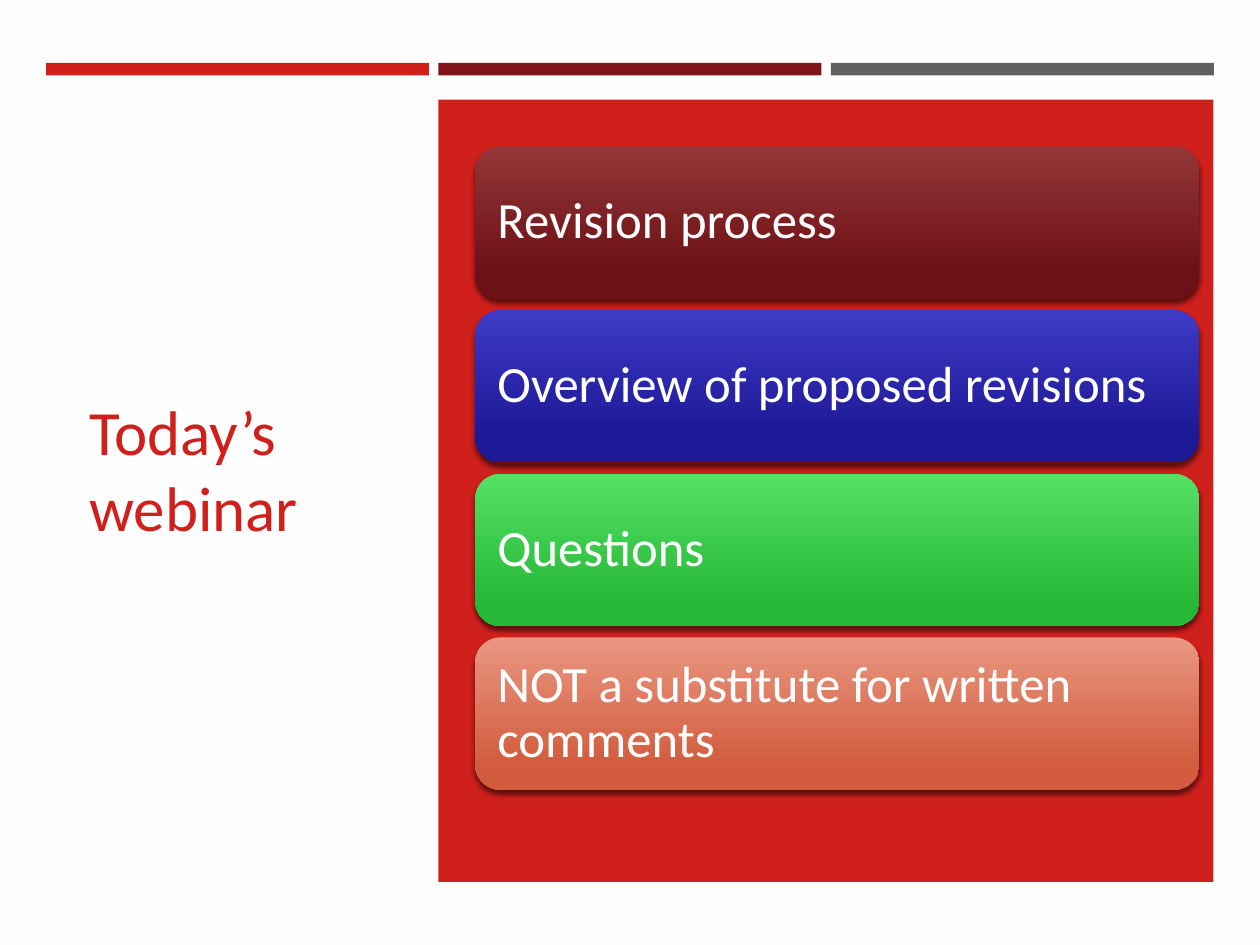
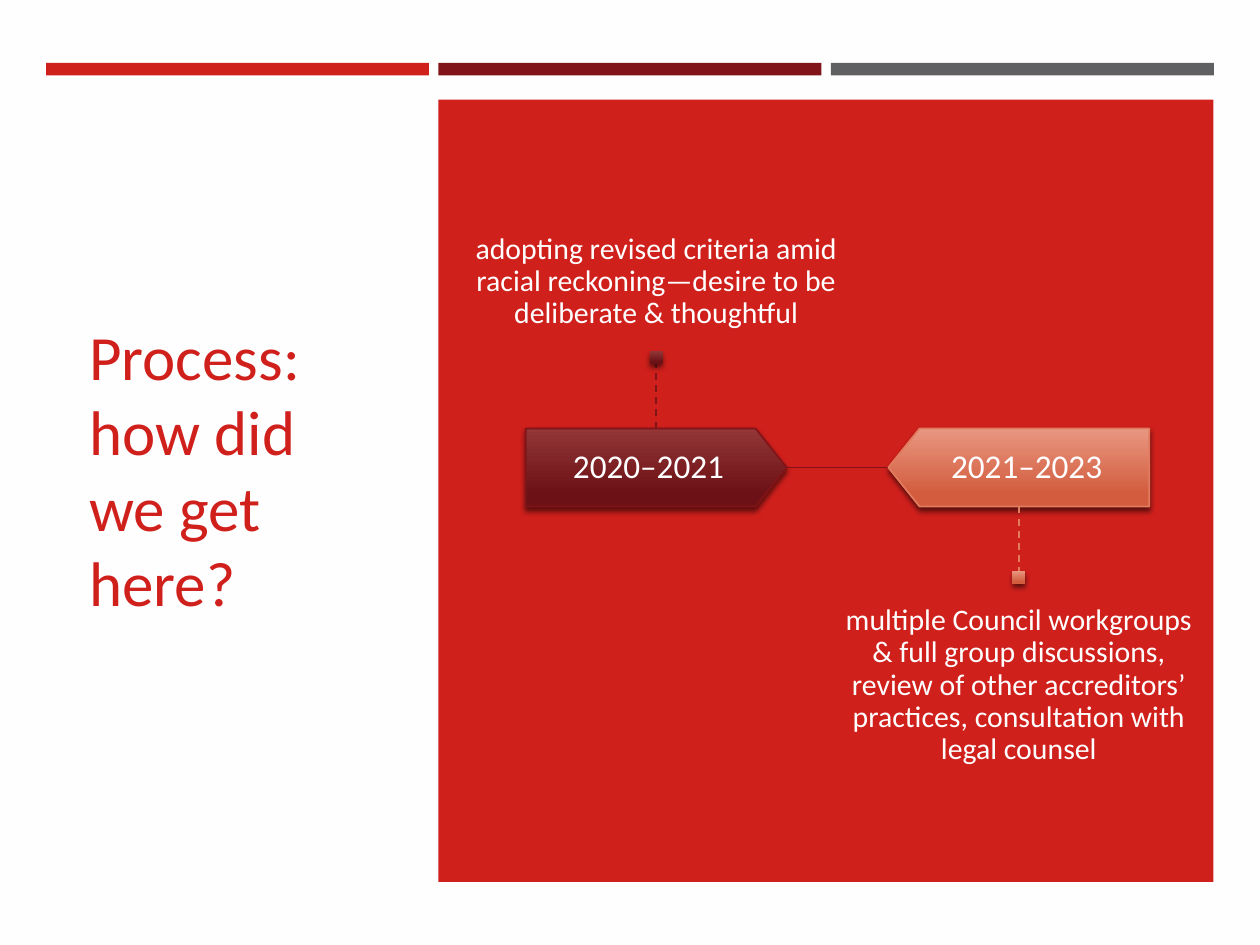
import dataclasses

import pptx
import pptx.dml.color
import pptx.enum.dml
import pptx.enum.shapes
import pptx.enum.text
import pptx.oxml
import pptx.oxml.ns
import pptx.shapes.autoshape
import pptx.slide
import pptx.util

Cm = pptx.util.Cm
Kind = pptx.enum.shapes.MSO_SHAPE
Anchor = pptx.enum.text.MSO_ANCHOR
Align = pptx.enum.text.PP_ALIGN
Slide = pptx.slide.Slide
Shape = pptx.shapes.autoshape.Shape


@dataclasses.dataclass(frozen=True)
class Tone:
    """A vertical shade and the line colour that goes with it."""
    top: str
    base: str
    line: str = ""


@dataclasses.dataclass(frozen=True)
class Theme:
    font: str = "Calibri"
    paper: str = "FFFEFF"
    white: str = "FFFFFF"
    red: str = "D0201C"
    wine: str = "811419"
    grey: str = "5F6062"
    dark: Tone = Tone("923638", "6C1115", "811419")
    blue: Tone = Tone("3D3AC5", "1D1896")
    green: Tone = Tone("55E164", "26B938")
    coral: Tone = Tone("E99782", "D25C3D", "E37B5F")
    title: int = 36
    card: int = 29
    date: int = 19
    note: int = 17


@dataclasses.dataclass(frozen=True)
class Box:
    """Left, top, width and height in centimetres."""
    left: float
    top: float
    width: float
    height: float

    def place(self) -> tuple[pptx.util.Length, ...]:
        return Cm(self.left), Cm(self.top), Cm(self.width), Cm(self.height)


@dataclasses.dataclass(frozen=True)
class Card:
    text: str
    tone: Tone


@dataclasses.dataclass(frozen=True)
class Event:
    date: str
    note: str
    tone: Tone
    mid: float
    above: bool


THEME = Theme()
PANEL = Box(8.84, 2.01, 15.62, 15.77)
TITLE = Box(1.55, 2.9, 6.35, 13.08)
BAND = Box(0.93, 1.27, 7.72, 0.25)
BAND_STEP = 7.91
CARD = Box(9.58, 2.95, 14.6, 3.07)
CARD_STEP = 3.3
TAG_TOP, TAG_WIDE, TAG_HIGH = 8.64, 5.26, 1.57
STEM, DOT = 1.3, 0.26
NOTE_WIDE, NOTE_HIGH = 7.32, 4.19

CARDS = [
    Card("Revision process", THEME.dark),
    Card("Overview of proposed revisions", THEME.blue),
    Card("Questions", THEME.green),
    Card("NOT a substitute for written comments", THEME.coral),
]
EVENTS = [
    Event("2020–2021",
          "adopting revised criteria amid racial reckoning—desire to be "
          "deliberate & thoughtful", THEME.dark, 13.23, True),
    Event("2021–2023",
          "multiple Council workgroups & full group discussions, review of "
          "other accreditors’ practices, consultation with legal counsel",
          THEME.coral, 20.54, False),
]


def shade(code: str) -> pptx.dml.color.RGBColor:
    return pptx.dml.color.RGBColor.from_string(code)


def add_block(slide: Slide, kind: Kind, box: Box) -> Shape:
    """Add a shape without line or shadow."""
    shape = slide.shapes.add_shape(kind, *box.place())
    shape.shadow.inherit = False
    shape.line.fill.background()
    return shape


def add_flat(slide: Slide, box: Box, code: str) -> None:
    shape = add_block(slide, Kind.RECTANGLE, box)
    shape.fill.solid()
    shape.fill.fore_color.rgb = shade(code)


def add_glossy(slide: Slide, kind: Kind, box: Box, tone: Tone) -> Shape:
    """Add a shape with a vertical gradient and a soft drop shadow."""
    shape = add_block(slide, kind, box)
    shape.fill.gradient()
    shape.fill.gradient_angle = 270
    for stop, code, pos in zip(shape.fill.gradient_stops,
                               (tone.top, tone.base), (0, 0.84)):
        stop.color.rgb = shade(code)
        stop.position = pos
    space = pptx.oxml.ns.nsdecls("a")
    shape.element.spPr.find(pptx.oxml.ns.qn("a:effectLst")).append(
        pptx.oxml.parse_xml(
            f'<a:outerShdw {space} blurRad="38100" dist="25400" dir="5400000" '
            'rotWithShape="0"><a:srgbClr val="000000"><a:alpha val="55000"/>'
            '</a:srgbClr></a:outerShdw>'))
    return shape


def add_line(slide: Slide, start: tuple[float, float],
             end: tuple[float, float], code: str, dashed: bool) -> None:
    line = slide.shapes.add_connector(
        pptx.enum.shapes.MSO_CONNECTOR.STRAIGHT,
        *(Cm(value) for value in start + end))
    line.line.color.rgb = shade(code)
    line.line.width = pptx.util.Pt(1)
    if dashed:
        line.line.dash_style = pptx.enum.dml.MSO_LINE.DASH
    line.element.spPr.append(
        pptx.oxml.parse_xml(f'<a:effectLst {pptx.oxml.ns.nsdecls("a")}/>'))


def write(shape: Shape, text: str, size: int, code: str = THEME.white,
          align: Align = Align.LEFT, anchor: Anchor = Anchor.MIDDLE,
          side: float = 0.25, edge: float = 0.13,
          pitch: float = 0.9) -> None:
    """Fill a shape with one styled paragraph; side and edge are insets."""
    frame = shape.text_frame
    frame.word_wrap = True
    frame.vertical_anchor = anchor
    frame.margin_left = frame.margin_right = Cm(side)
    frame.margin_top = frame.margin_bottom = Cm(edge)
    para = frame.paragraphs[0]
    para.text = text
    para.alignment = align
    para.line_spacing = pitch
    para.font.name = THEME.font
    para.font.size = pptx.util.Pt(size)
    para.font.color.rgb = shade(code)


def add_page(deck: pptx.presentation.Presentation, title: str) -> Slide:
    """Add a slide with the title, the three bands and the red panel."""
    slide = deck.slides.add_slide(deck.slide_layouts[6])
    slide.background.fill.solid()
    slide.background.fill.fore_color.rgb = shade(THEME.paper)
    write(slide.shapes.add_textbox(*TITLE.place()), title, THEME.title,
          THEME.red, pitch=1.0)
    for i, code in enumerate((THEME.red, THEME.wine, THEME.grey)):
        left = BAND.left + i * BAND_STEP
        add_flat(slide, dataclasses.replace(BAND, left=left), code)
    add_flat(slide, PANEL, THEME.red)
    return slide


def add_event(slide: Slide, event: Event) -> None:
    """Add a date tag with its stem, dot and note above or below."""
    box = Box(event.mid - TAG_WIDE / 2, TAG_TOP, TAG_WIDE, TAG_HIGH)
    tag = add_glossy(slide, Kind.PENTAGON, box, event.tone)
    tag.adjustments[0] = 0.4
    tag.line.color.rgb = shade(event.tone.line)
    tag.line.width = pptx.util.Pt(1)
    if not event.above:
        tag.element.spPr.xfrm.set("flipH", "1")
    write(tag, event.date, THEME.date, align=Align.CENTER,
          side=0.41, edge=0.41)

    if event.above:
        root = TAG_TOP
        tip = root - STEM
        dot = tip - DOT
        top = dot - NOTE_HIGH
    else:
        root = TAG_TOP + TAG_HIGH
        dot = tip = root + STEM
        top = dot + DOT
    note = Box(event.mid - NOTE_WIDE / 2, top, NOTE_WIDE, NOTE_HIGH)
    write(slide.shapes.add_textbox(*note.place()), event.note, THEME.note,
          align=Align.CENTER,
          anchor=Anchor.BOTTOM if event.above else Anchor.TOP,
          side=0, edge=0.43)
    add_line(slide, (event.mid, root), (event.mid, tip),
             event.tone.line, True)
    add_glossy(slide, Kind.RECTANGLE,
               Box(event.mid - DOT / 2, dot, DOT, DOT), event.tone)


def main() -> None:
    deck = pptx.Presentation()
    deck.slide_width, deck.slide_height = Cm(25.4), Cm(19.05)

    slide = add_page(deck, "Today’s webinar")
    for i, card in enumerate(CARDS):
        box = dataclasses.replace(CARD, top=CARD.top + i * CARD_STEP)
        shape = add_glossy(slide, Kind.ROUNDED_RECTANGLE, box, card.tone)
        write(shape, card.text, THEME.card, side=0.3, edge=0.3)

    slide = add_page(deck, "Process: how did we get here?")
    first, last = EVENTS
    level = TAG_TOP + TAG_HIGH / 2
    add_line(slide, (first.mid + TAG_WIDE / 2, level),
             (last.mid - TAG_WIDE / 2, level), THEME.wine, False)
    for event in EVENTS:
        add_event(slide, event)

    deck.save("out.pptx")


if __name__ == "__main__":
    main()
